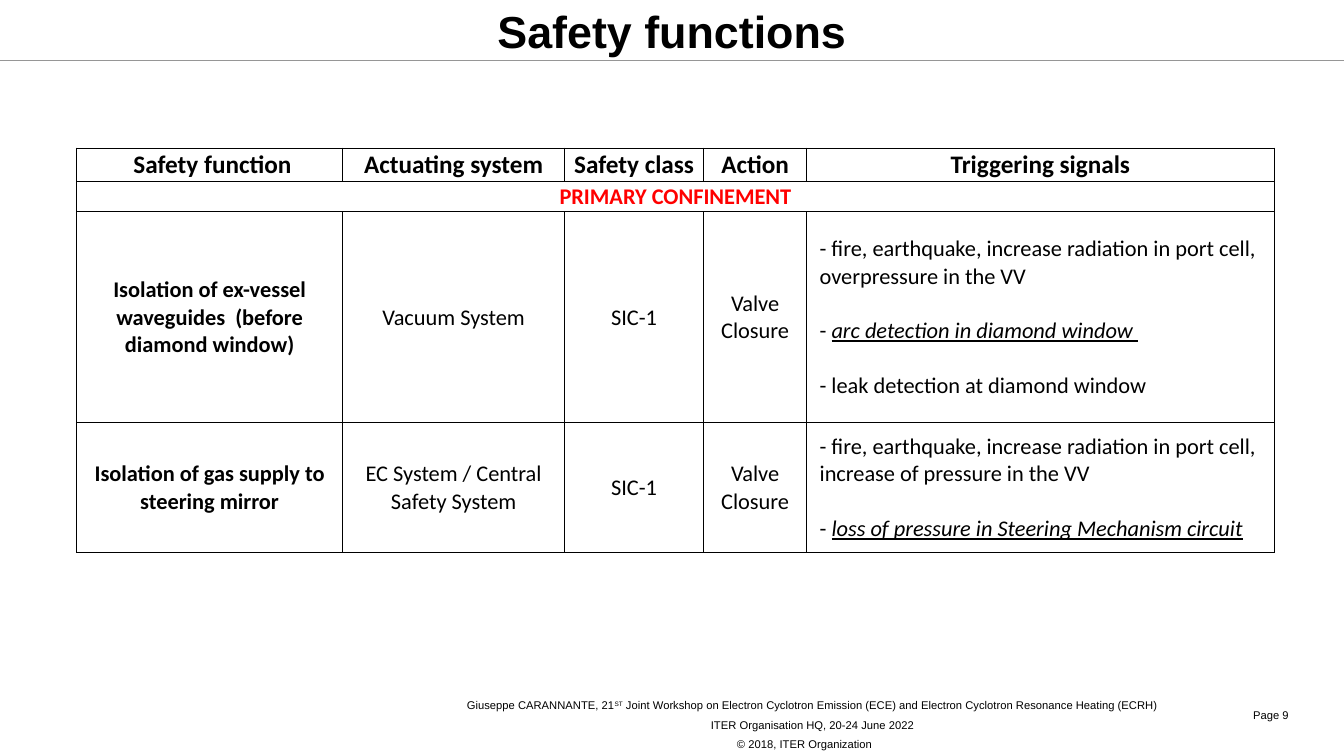
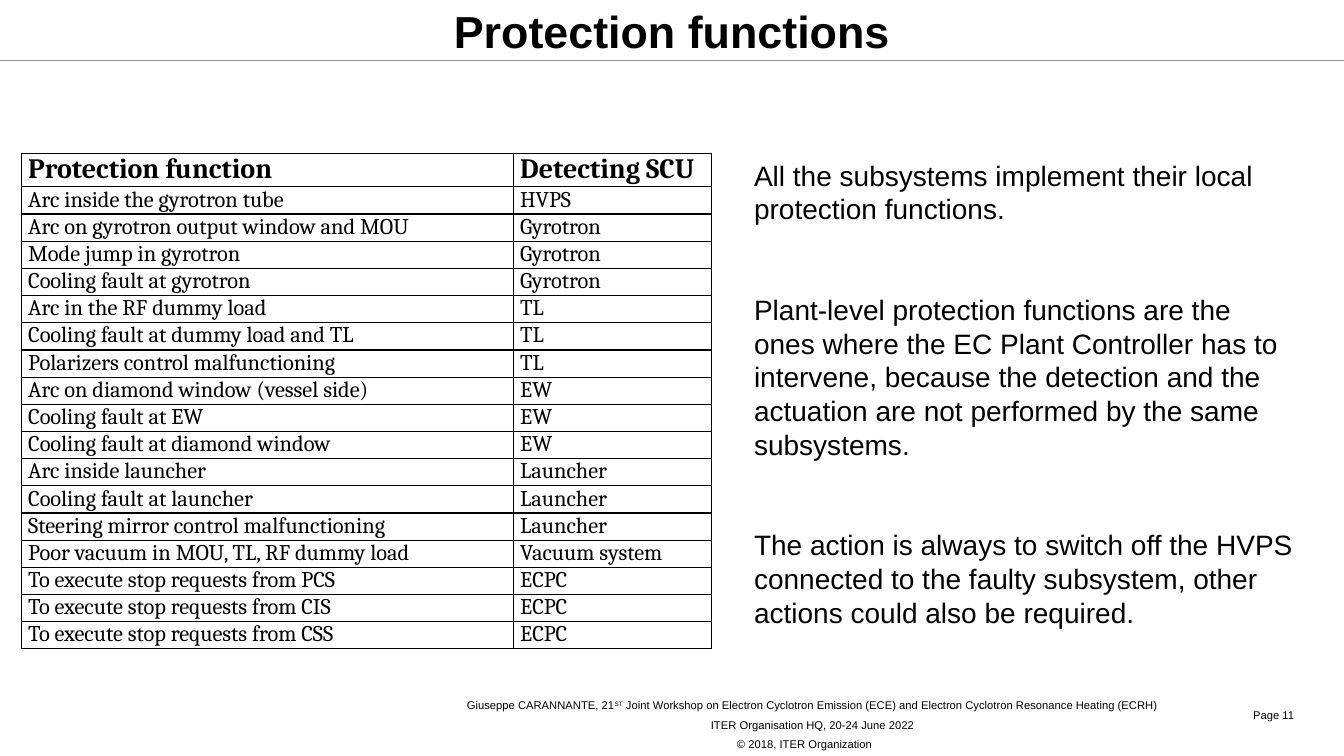
from dataclasses import dataclass, replace

from lxml.etree import SubElement
from pptx import Presentation
from pptx.dml.color import RGBColor
from pptx.enum.shapes import MSO_CONNECTOR as Connector
from pptx.enum.text import MSO_ANCHOR as Anchor, PP_ALIGN as Align
from pptx.oxml import parse_xml
from pptx.oxml.ns import nsdecls, qn
from pptx.util import Inches, Pt


# Theme: colours, fonts and type sizes
@dataclass(frozen=True)
class Theme:
    ink: str = "000000"
    accent: str = "FF0000"
    rule: str = "969696"
    sans: str = "Arial"
    table_sans: str = "Calibri"
    table_serif: str = "Cambria"
    title: int = 32
    heading: int = 20
    table_head: int = 18
    body: int = 16
    footer: int = 8


@dataclass(frozen=True)
class TextStyle:
    font: str
    size: int
    color: str = Theme.ink
    bold: bool = False
    align: int = Align.LEFT
    before: float = 0
    leading: float = None


@dataclass(frozen=True)
class Span:
    text: str
    stressed: bool = False
    raised: bool = False


THEME = Theme()
PAGE_WIDTH, PAGE_HEIGHT = 13.33, 7.5
SIDES = ("L", "R", "T", "B")

FOOTER = [
    [Span("Giuseppe CARANNANTE, 21"), Span("ST", raised=True),
     Span(" Joint Workshop on Electron Cyclotron Emission (ECE) and "
          "Electron Cyclotron Resonance Heating (ECRH)")],
    "ITER Organisation HQ, 20-24 June 2022",
    "© 2018, ITER Organization\t",
]


class Deck:
    """Holds the style and the current page."""

    def __init__(self, theme):
        self.theme = theme
        self.show = Presentation()
        self.show.slide_width = Inches(PAGE_WIDTH)
        self.show.slide_height = Inches(PAGE_HEIGHT)
        self.page = None

    def add_page(self, title, number):
        theme = self.theme
        self.page = self.show.slides.add_slide(self.show.slide_layouts[6])
        self.add_rule(0.6)
        small = TextStyle(theme.sans, theme.footer, before=4.4)
        self.add_text(3.78, 6.87, 8.56, 0.64, FOOTER,
                      replace(small, align=Align.CENTER), Anchor.MIDDLE)
        self.add_text(12.33, 6.97, 0.85, 0.24, [f"Page {number}"], small,
                      Anchor.MIDDLE)
        heading = TextStyle(theme.sans, theme.title, bold=True, align=Align.CENTER)
        self.add_text(0, 0, PAGE_WIDTH, 0.6, [title], heading, Anchor.MIDDLE)

    def add_rule(self, top):
        rule = self.page.shapes.add_connector(
            Connector.STRAIGHT, 0, Inches(top), Inches(PAGE_WIDTH), Inches(top))
        rule.line.color.rgb = RGBColor.from_string(self.theme.rule)
        rule.line.width = Pt(1.25)
        SubElement(rule._element.spPr, qn("a:effectLst"))

    def add_text(self, left, top, width, height, paras, style, anchor=Anchor.TOP):
        box = self.page.shapes.add_textbox(
            Inches(left), Inches(top), Inches(width), Inches(height))
        frame = box.text_frame
        frame.word_wrap = True
        frame.vertical_anchor = anchor
        self.add_paras(frame, paras, style)

    def add_paras(self, frame, paras, style):
        """Each paragraph is a plain string or a list of spans."""
        for index, content in enumerate(paras):
            para = frame.add_paragraph() if index else frame.paragraphs[0]
            para.alignment = style.align
            if index and style.before:
                para.space_before = Pt(style.before)
            if style.leading:
                para.line_spacing = Pt(style.leading)
            spans = [Span(content)] if isinstance(content, str) else content
            for span in spans:
                run = para.add_run()
                run.text = span.text
                font = run.font
                font.name, font.size = style.font, Pt(style.size)
                font.color.rgb = RGBColor.from_string(style.color)
                font.bold = style.bold
                if span.stressed:
                    font.italic = font.underline = True
                if span.raised:
                    font._element.set("baseline", "30000")

    def add_table(self, left, top, columns, heights):
        frame = self.page.shapes.add_table(
            len(heights), len(columns), Inches(left), Inches(top),
            Inches(sum(columns)), Inches(sum(heights)))
        table = frame.table
        table.first_row = table.horz_banding = False
        for column, width in zip(table.columns, columns):
            column.width = Inches(width)
        for row, height in zip(table.rows, heights):
            row.height = Inches(height)
        return table

    def fill_cell(self, cell, paras, style, margins, anchor=Anchor.TOP):
        (cell.margin_left, cell.margin_top,
         cell.margin_right, cell.margin_bottom) = map(Inches, margins)
        cell.vertical_anchor = anchor
        self.add_paras(cell.text_frame, paras, style)

    def add_borders(self, table, inner=1.0):
        """Outer and horizontal edges are 1 pt; inner verticals may be thinner."""
        last = len(table.columns) - 1
        for row in table.rows:
            for index, cell in enumerate(row.cells):
                cell.fill.background()
                widths = (inner if index else 1, inner if index < last else 1, 1, 1)
                for place, (side, width) in enumerate(zip(SIDES, widths)):
                    edge = parse_xml(
                        f'<a:ln{side} {nsdecls("a")} w="{Pt(width)}"><a:solidFill>'
                        f'<a:srgbClr val="{self.theme.ink}"/></a:solidFill></a:ln{side}>')
                    cell._tc.get_or_add_tcPr().insert(place, edge)


def safety_page(deck):
    theme = deck.theme
    deck.add_page("Safety functions", 9)
    body = TextStyle(theme.table_sans, theme.body, align=Align.CENTER)
    label = replace(body, bold=True)
    head = replace(label, size=theme.table_head)
    signals = replace(body, align=Align.LEFT, before=19.5)
    margins, indented = (0.01, 0.01, 0.01, 0), (0.13, 0.01, 0.01, 0)

    # Header and section rows
    table = deck.add_table(0.76, 1.47, [2.64, 2.2, 1.38, 1.02, 4.64],
                           [0.33, 0.3, 2.09, 1.29])
    headers = [" Safety function", "Actuating system", "Safety class",
               "Action", "Triggering signals"]
    for column, text in enumerate(headers):
        deck.fill_cell(table.cell(0, column), [text], head, margins, Anchor.MIDDLE)
    deck.add_borders(table, inner=0.5)
    table.cell(1, 0).merge(table.cell(1, 4))
    deck.fill_cell(table.cell(1, 0), ["PRIMARY CONFINEMENT"],
                   replace(label, color=theme.accent), margins, Anchor.MIDDLE)

    # Function rows
    functions = [
        ("Isolation of ex-vessel waveguides  (before diamond window)",
         "Vacuum System",
         ["- fire, earthquake, increase radiation in port cell, overpressure in the VV",
          [Span("- "), Span("arc detection in diamond window ", stressed=True)],
          "- leak detection at diamond window"]),
        ("Isolation of gas supply to steering mirror",
         "EC System / Central Safety System",
         ["- fire, earthquake, increase radiation in port cell, "
          "increase of pressure in the VV",
          [Span("- "),
           Span("loss of pressure in Steering Mechanism circuit", stressed=True)]]),
    ]
    for row, (function, system, triggers) in enumerate(functions, start=2):
        deck.fill_cell(table.cell(row, 0), [function], label, margins, Anchor.MIDDLE)
        for column, text in enumerate([system, "SIC-1", "Valve Closure"], start=1):
            deck.fill_cell(table.cell(row, column), [text], body, margins,
                           Anchor.MIDDLE)
        deck.fill_cell(table.cell(row, 4), triggers, signals, indented, Anchor.MIDDLE)


def protection_page(deck):
    theme = deck.theme
    deck.add_page("Protection functions", 11)

    # Table of functions and detecting units
    rows = [
        ("Protection function", "Detecting SCU"),
        ("Arc inside the gyrotron tube", "HVPS"),
        ("Arc on gyrotron output window and MOU", "Gyrotron"),
        ("Mode jump in gyrotron", "Gyrotron"),
        ("Cooling fault at gyrotron", "Gyrotron"),
        ("Arc in the RF dummy load", "TL"),
        ("Cooling fault at dummy load and TL", "TL"),
        ("Polarizers control malfunctioning", "TL"),
        ("Arc on diamond window (vessel side)", "EW"),
        ("Cooling fault at EW", "EW"),
        ("Cooling fault at diamond window", "EW"),
        ("Arc inside launcher", "Launcher"),
        ("Cooling fault at launcher", "Launcher"),
        ("Steering mirror control malfunctioning", "Launcher"),
        ("Poor vacuum in MOU, TL, RF dummy load", "Vacuum system"),
        ("To execute stop requests from PCS", "ECPC"),
        ("To execute stop requests from CIS", "ECPC"),
        ("To execute stop requests from CSS", "ECPC"),
    ]
    heights = [0.32] + [0.27] * 13 + [0.25] + [0.27] * 3
    table = deck.add_table(0.21, 1.52, [4.88, 1.97], heights)
    body = TextStyle(theme.table_serif, theme.body, align=Align.JUSTIFY)
    head = replace(body, size=theme.heading, bold=True)
    for row, texts in enumerate(rows):
        for column, text in enumerate(texts):
            deck.fill_cell(table.cell(row, column), [text], body if row else head,
                           (0.07, 0, 0.07, 0))
    deck.add_borders(table)

    # Explanation
    deck.add_text(7.38, 1.52, 5.59, 4.81, [
        "All the subsystems implement their local protection functions.",
        "Plant-level protection functions are the ones where the EC Plant Controller "
        "has to intervene, because the detection and the actuation are not performed "
        "by the same subsystems.",
        "The action is always to switch off the HVPS connected to the faulty "
        "subsystem, other actions could also be required.",
    ], TextStyle(theme.sans, theme.heading, before=48, leading=24))


def main():
    deck = Deck(THEME)
    safety_page(deck)
    protection_page(deck)
    deck.show.save("out.pptx")


if __name__ == "__main__":
    main()
